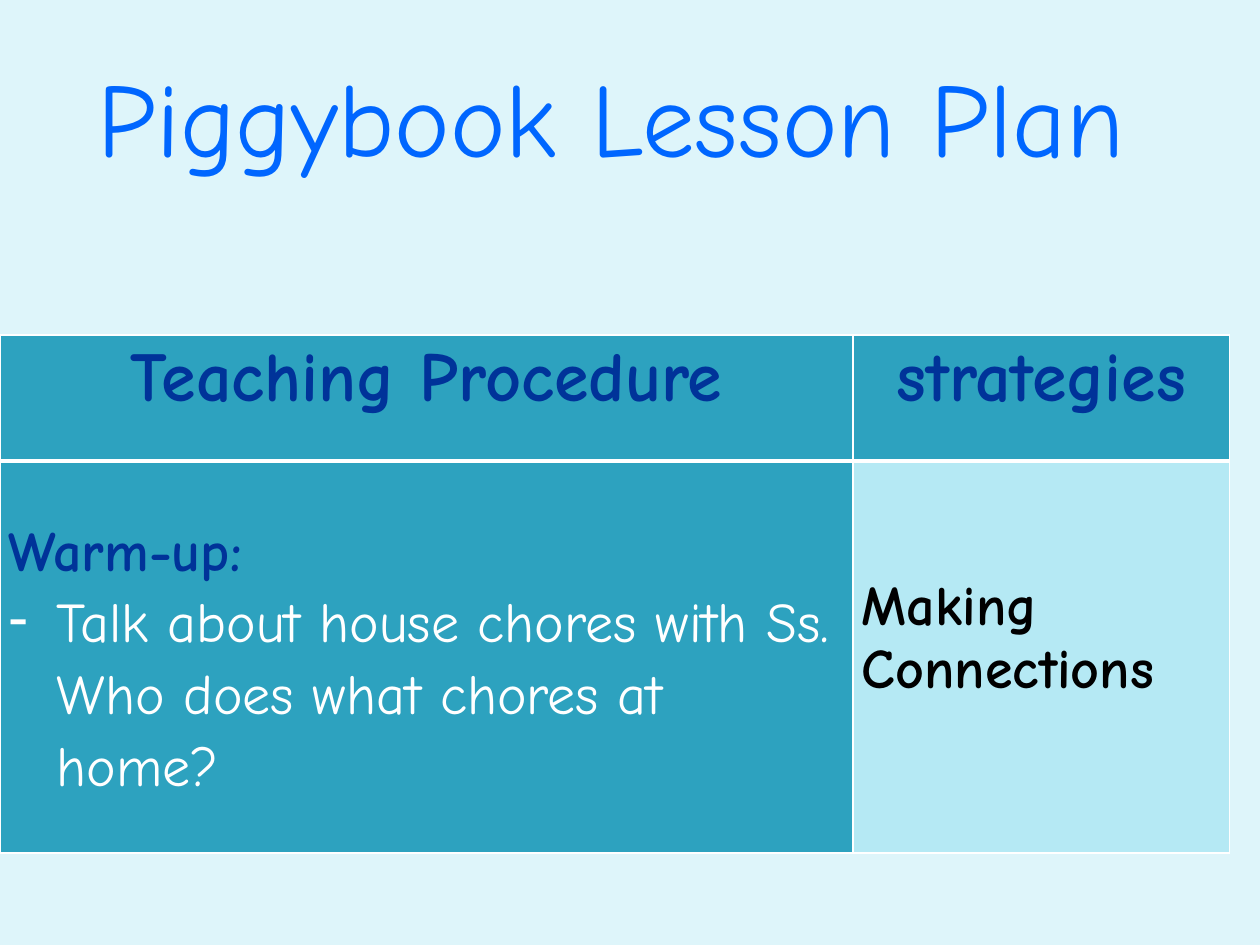
from lxml import etree
from pptx import Presentation
from pptx.dml.color import RGBColor
from pptx.enum.text import MSO_ANCHOR as Anchor, PP_ALIGN as Align
from pptx.oxml.ns import qn
from pptx.util import Inches, Pt

FONT = "Comic Neue"
PALE = RGBColor(0xDE, 0xF5, 0xFA)
TEAL = RGBColor(0x2D, 0xA2, 0xBF)
AQUA = RGBColor(0xB5, 0xE9, 0xF4)
BLUE = RGBColor(0x00, 0x66, 0xFF)
NAVY = RGBColor(0x00, 0x33, 0x99)
WHITE = RGBColor(0xFF, 0xFF, 0xFF)
BLACK = RGBColor(0x00, 0x00, 0x00)


def write(paragraph, text, size, color, bold=False, align=Align.LEFT, line=None):
    """Add one styled run to a paragraph."""
    paragraph.alignment = align
    if line:
        paragraph.line_spacing = Pt(line)
    run = paragraph.add_run()
    run.text = text
    run.font.name = FONT
    run.font.size = Pt(size)
    run.font.bold = bold
    run.font.color.rgb = color


def add_dash(paragraph, indent):
    """Give a paragraph a hanging dash bullet."""
    properties = paragraph._p.get_or_add_pPr()
    properties.set("marL", str(indent))
    properties.set("indent", str(-indent))
    etree.SubElement(properties, qn("a:buChar")).set("char", "-")


def style_cell(cell, fill, top=1, bottom=1):
    """Set the margins, white borders and fill of a table cell."""
    cell.margin_left = cell.margin_right = Inches(0.07)
    cell.margin_top = cell.margin_bottom = 0
    properties = cell._tc.get_or_add_tcPr()
    for side, width in (("L", 1), ("R", 1), ("T", top), ("B", bottom)):
        border = etree.SubElement(properties, qn(f"a:ln{side}"), w=str(Pt(width)))
        solid = etree.SubElement(border, qn("a:solidFill"))
        etree.SubElement(solid, qn("a:srgbClr"), val=str(WHITE))
    cell.fill.solid()
    cell.fill.fore_color.rgb = fill


def add_title(slide, left, top, width, height):
    """Place the slide title in the given box."""
    frame = slide.shapes.add_textbox(left, top, width, height).text_frame
    frame.word_wrap = True
    frame.vertical_anchor = Anchor.MIDDLE
    write(frame.paragraphs[0], "Piggybook Lesson Plan", 60, BLUE, align=Align.CENTER)


def add_plan(slide, left, top, width, height):
    """Place the lesson plan table in the given box."""
    table = slide.shapes.add_table(2, 2, left, top, width, height).table
    table.columns[0].width = Inches(6.77)
    table.columns[1].width = width - Inches(6.77)
    table.rows[0].height = Inches(1)
    table.rows[1].height = height - Inches(1)

    for column, heading in enumerate(("Teaching Procedure", "strategies")):
        cell = table.cell(0, column)
        style_cell(cell, TEAL, bottom=3)
        cell.vertical_anchor = Anchor.MIDDLE
        write(cell.text_frame.paragraphs[0], heading, 40, NAVY, True, Align.CENTER, 24)

    procedure, strategy = table.cell(1, 0), table.cell(1, 1)
    style_cell(procedure, TEAL, top=3)
    procedure.margin_top = Pt(30)
    frame = procedure.text_frame
    write(frame.paragraphs[0], "Warm-up:", 32, NAVY, True, Align.JUSTIFY, 41)
    task = frame.add_paragraph()
    task.line_spacing = Pt(41)
    add_dash(task, Inches(0.38))
    write(task, "Talk about house chores with Ss. Who does what chores at home?", 32, WHITE)

    style_cell(strategy, AQUA, top=3)
    strategy.margin_top = Pt(66)
    write(strategy.text_frame.paragraphs[0], "Making Connections", 32, BLACK, True,
          Align.JUSTIFY, 36)


def main():
    """Build and save the lesson plan slide."""
    presentation = Presentation()
    presentation.slide_width = Inches(10)
    presentation.slide_height = Inches(7.5)
    slide = presentation.slides.add_slide(presentation.slide_layouts[6])
    slide.background.fill.solid()
    slide.background.fill.fore_color.rgb = PALE
    add_plan(slide, Inches(0), Inches(2.66), Inches(9.76), Inches(4.11))
    add_title(slide, Inches(0.35), Inches(0.29), Inches(9), Inches(1.25))
    presentation.save("out.pptx")


if __name__ == "__main__":
    main()
